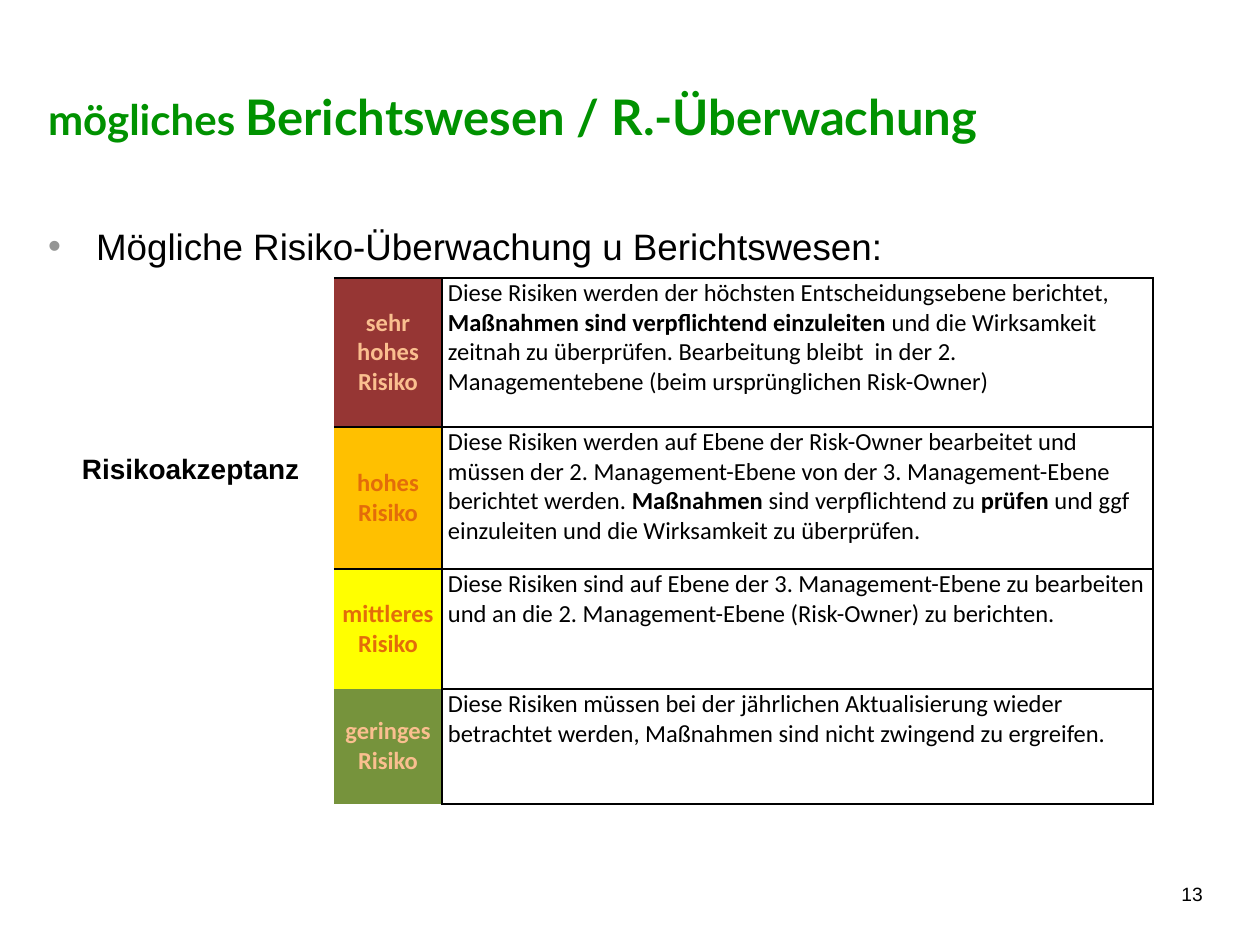
from pptx import Presentation
from pptx.dml.color import RGBColor as Rgb
from pptx.enum.text import MSO_ANCHOR as Anchor, MSO_AUTO_SIZE as Fit, PP_ALIGN as Align
from pptx.oxml import parse_xml as parse
from pptx.oxml.ns import nsdecls
from pptx.util import Pt

SCALE = 914400 / 126
NS = nsdecls("a")
BLACK = "000000"


def px(n):
    return round(n * SCALE)


def tint(code):
    return Rgb.from_string(code)


def apply(obj, vals):
    for key, val in vals.items():
        setattr(obj, key, val)


class Deck:
    sans = "Arial"
    head = "Lato"
    grid = "Calibri"

    def __init__(self):
        self.prs = Presentation()
        apply(self.prs, {"slide_width": px(1260), "slide_height": px(945)})
        self.slide = self.prs.slides.add_slide(self.prs.slide_layouts[1])

    def place(self, shape, box):
        apply(shape, dict(zip(("left", "top", "width", "height"), map(px, box))))

    def frame(self, shape, inset):
        frame = shape.text_frame
        apply(frame, {
            "word_wrap": True, "auto_size": Fit.NONE, "vertical_anchor": Anchor.TOP,
            "margin_left": px(13), "margin_right": px(13),
            "margin_top": px(inset), "margin_bottom": px(6),
        })
        return frame.paragraphs[0]

    def fill_text(self, para, runs, font, align=Align.LEFT):
        apply(para, {"alignment": align, "space_before": Pt(0)})
        for text, size, color, bold in runs:
            run = para.add_run()
            run.text = text
            apply(run.font, {"name": font, "size": Pt(size), "bold": bold})
            run.font.color.rgb = tint(color)

    def title(self, box, runs):
        shape = self.slide.shapes.title
        self.place(shape, box)
        self.fill_text(self.frame(shape, 60), runs, self.head)

    def body(self, box, runs):
        shape = self.slide.placeholders[1]
        self.place(shape, box)
        para = self.frame(shape, 10)
        props = para._p.get_or_add_pPr()
        props.set("marL", str(px(48)))
        props.set("indent", str(-px(48)))
        props.append(parse(f'<a:buClr {NS}><a:srgbClr val="949594"/></a:buClr>'))
        props.append(parse(f'<a:buFont {NS} typeface="{self.sans}"/>'))
        props.append(parse(f'<a:buChar {NS} char="•"/>'))
        self.fill_text(para, runs, self.sans)

    def label(self, box, runs, inset=6, align=Align.LEFT):
        shape = self.slide.shapes.add_textbox(*map(px, box))
        self.fill_text(self.frame(shape, inset), runs, self.sans, align)

    def edges(self, cell, sides):
        props = cell._tc.get_or_add_tcPr()
        solid = f'<a:solidFill><a:srgbClr val="{BLACK}"/></a:solidFill>'
        for side in "LRTB":
            ink = solid if side in sides else "<a:noFill/>"
            props.append(parse(f'<a:ln{side} {NS} w="{px(2)}">{ink}</a:ln{side}>'))

    def cell(self, cell, runs, sides, fill=None):
        self.edges(cell, sides)
        apply(cell, {
            "margin_left": px(6), "margin_right": px(6),
            "margin_top": 0, "margin_bottom": 0,
            "vertical_anchor": Anchor.MIDDLE if fill else Anchor.TOP,
        })
        if fill:
            cell.fill.solid()
            cell.fill.fore_color.rgb = tint(fill)
        else:
            cell.fill.background()
        align = Align.CENTER if fill else Align.LEFT
        self.fill_text(cell.text_frame.paragraphs[0], runs, self.grid, align)

    def table(self, left, top, cols, levels):
        high = sum(level[0] for level in levels)
        box = map(px, (left, top, sum(cols), high))
        table = self.slide.shapes.add_table(len(levels), len(cols), *box).table
        apply(table, {"first_row": False, "horz_banding": False})
        for col, width in zip(table.columns, cols):
            col.width = px(width)
        for i, (height, name, fill, ink, sides, parts) in enumerate(levels):
            table.rows[i].height = px(height)
            self.cell(table.cell(i, 0), [(name, 14, ink, True)], sides, fill)
            runs = [(text, 14, BLACK, n % 2 == 1) for n, text in enumerate(parts)]
            self.cell(table.cell(i, 1), runs, "LRTB")


LEVELS = [
    (149, "sehr hohes Risiko", "963634", "FABF8F", "TRB", [
        "Diese Risiken werden der höchsten Entscheidungsebene berichtet, ",
        "Maßnahmen sind verpflichtend einzuleiten ",
        "und die Wirksamkeit zeitnah zu überprüfen. Bearbeitung bleibt  in der 2. "
        "Managementebene (beim ursprünglichen Risk-Owner)",
    ]),
    (142, "hohes Risiko", "FFC000", "E36C0A", "TRB", [
        "Diese Risiken werden auf Ebene der Risk-Owner bearbeitet und müssen der "
        "2. Management-Ebene von der 3. Management-Ebene berichtet werden. ",
        "Maßnahmen",
        " sind verpflichtend zu ",
        "prüfen",
        " und ggf einzuleiten und die Wirksamkeit zu überprüfen.",
    ]),
    (120, "mittleres Risiko", "FFFF00", "E36C0A", "TR", [
        "Diese Risiken sind auf Ebene der 3. Management-Ebene zu bearbeiten und "
        "an die 2. Management-Ebene (Risk-Owner) zu berichten.",
    ]),
    (115, "geringes Risiko", "76933C", "FABF8F", "R", [
        "Diese Risiken müssen bei der jährlichen Aktualisierung wieder betrachtet "
        "werden, Maßnahmen sind nicht zwingend zu ergreifen.",
    ]),
]


def main():
    deck = Deck()
    deck.title((35, 26, 1134, 158), [
        ("mögliches ", 24, "009200", True),
        ("Berichtswesen / R.-Überwachung", 28, "009200", True),
    ])
    deck.body((35, 214, 1181, 655), [
        ("Mögliche Risiko-Überwachung u Berichtswesen:", 21, BLACK, False),
    ])
    deck.table(334, 278, (108, 711), LEVELS)
    deck.label((69, 443, 373, 85), [("Risikoakzeptanz", 16, BLACK, True)], 9)
    deck.label((1116, 876, 100, 50), [("13", 11, BLACK, False)], align=Align.RIGHT)
    deck.prs.save("out.pptx")


if __name__ == "__main__":
    main()
